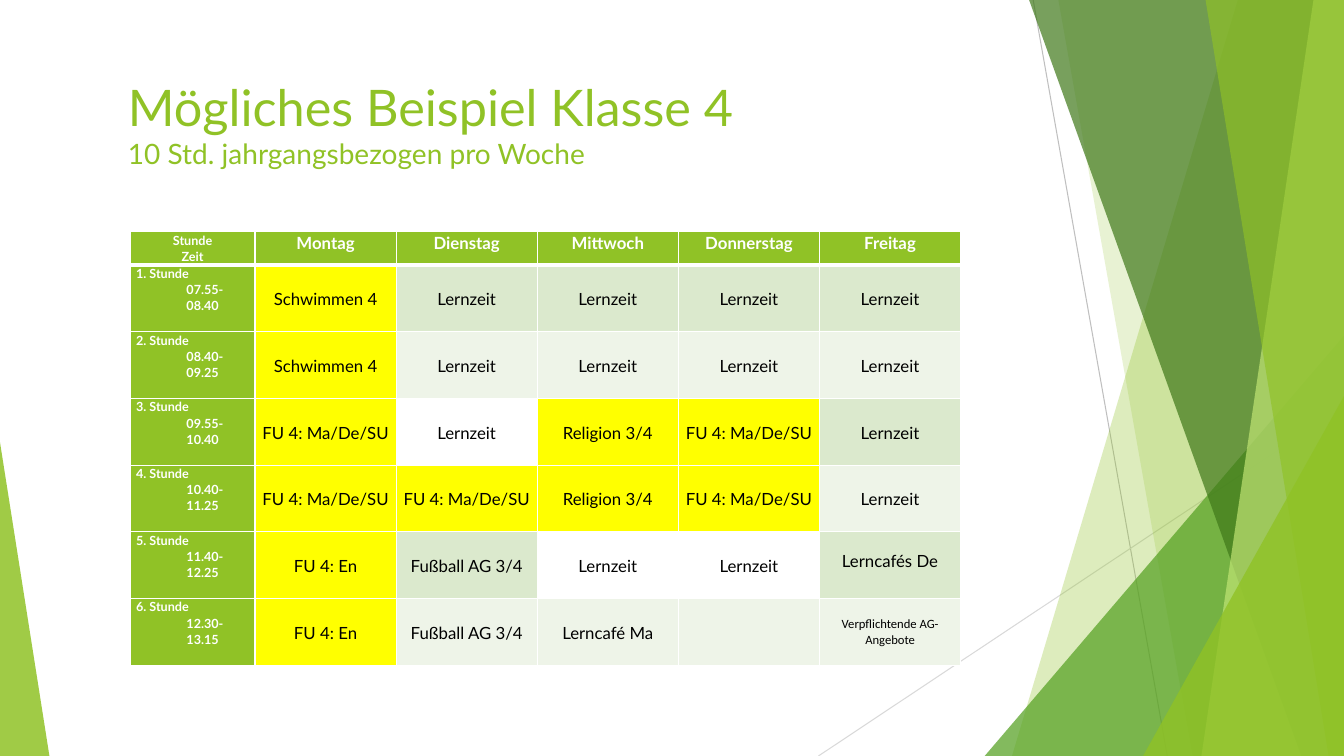
from copy import deepcopy
from lxml import etree
from pptx import Presentation
from pptx import util as u
from pptx.dml.color import RGBColor
from pptx.enum import shapes, text
from pptx.oxml import ns

GREEN = RGBColor(0x90, 0xC2, 0x26)
MID_GREEN = RGBColor(0x54, 0xA0, 0x21)
DARK_GREEN = RGBColor(0x3F, 0x78, 0x19)
LIGHT_GREEN = RGBColor(0xC0, 0xE4, 0x74)
BAND_DARK = RGBColor(0xDB, 0xE9, 0xCD)
BAND_LIGHT = RGBColor(0xEE, 0xF4, 0xE8)
YELLOW = RGBColor(0xFF, 0xFF, 0x00)
WHITE = RGBColor(0xFF, 0xFF, 0xFF)
BLACK = RGBColor(0x00, 0x00, 0x00)
GREY = RGBColor(0xBF, 0xBF, 0xBF)
PALE_GREY = RGBColor(0xD9, 0xD9, 0xD9)
WIDTH, HEIGHT = 960, 540


def paint(shape, colour, opacity):
    shape.shadow.inherit = False
    shape.line.fill.background()
    shape.fill.solid()
    shape.fill.fore_color.rgb = colour
    tint = shape.fill._xPr.find(".//" + ns.qn("a:srgbClr"))
    etree.SubElement(tint, ns.qn("a:alpha"), val=str(opacity * 1000))


def write(para, words, **formats):
    span = para.add_run()
    span.text = words
    colour = formats.pop("colour")
    for name, value in {"name": "Lato", **formats}.items():
        setattr(span.font, name, value)
    span.font.color.rgb = colour
    return span


deck = Presentation()
deck.slide_width, deck.slide_height = u.Pt(WIDTH), u.Pt(HEIGHT)
page = deck.slides.add_slide(deck.slide_layouts[5])

for x1, y1, x2, y2, colour in [
    (738, 0, 833.8, HEIGHT, GREY),
    (WIDTH, 290.2, 584.6, HEIGHT, PALE_GREY),
]:
    line = page.shapes.add_connector(
        shapes.MSO_CONNECTOR.STRAIGHT, u.Pt(x1), u.Pt(y1), u.Pt(x2), u.Pt(y2))
    line.line.color.rgb = colour
    line.line.width = u.Pt(0.75)
    etree.SubElement(line._element.spPr, ns.qn("a:effectLst"))

facets = [
    ("band", (884.2, 722.9), GREEN, 30),
    ("band", (756, 851.8), GREEN, 20),
    ("triangle", (703.4, 239.8, 256.6, 1), MID_GREEN, 72),
    ("band", (735.1, 929.5), DARK_GREEN, 70),
    ("band", (938.2, 858.2), LIGHT_GREEN, 70),
    ("band", (861.1, 949), GREEN, 65),
    ("triangle", (816.5, 283, 143.5, 1), GREEN, 80),
    ("triangle", (0, 316, 35.3, 0), GREEN, 85),
]
for kind, place, colour, opacity in facets:
    if kind == "band":
        top_x, bottom_x = place
        outline = page.shapes.build_freeform(u.Pt(top_x), 0)
        corners = [(WIDTH, 0), (WIDTH, HEIGHT), (bottom_x, HEIGHT)]
        outline.add_line_segments([(u.Pt(x), u.Pt(y)) for x, y in corners])
        facet = outline.convert_to_shape()
    else:
        left, top, width, apex = place
        facet = page.shapes.add_shape(
            shapes.MSO_SHAPE.ISOSCELES_TRIANGLE,
            u.Pt(left), u.Pt(top), u.Pt(width), u.Pt(HEIGHT - top))
        facet.adjustments[0] = apex
    paint(facet, colour, opacity)

title = page.shapes.title
for name, value in {"left": 84.2, "top": 50.4, "width": 792, "height": 85.7}.items():
    setattr(title, name, u.Pt(value))
frame = title.text_frame
frame.auto_size = text.MSO_AUTO_SIZE.NONE
frame.vertical_anchor = text.MSO_ANCHOR.TOP
para = frame.paragraphs[0]
para.alignment = text.PP_ALIGN.LEFT
heading = write(para, "Mögliches Beispiel Klasse 4", size=u.Pt(36), colour=GREEN)
para.add_line_break()
para._p.find(ns.qn("a:br")).append(deepcopy(heading._r.rPr))
write(para, "10 Std. jahrgangsbezogen pro Woche", size=u.Pt(20), colour=GREEN)

FU = "FU 4: Ma/De/SU"
timetable = [
    (["Stunde", "Zeit"], ["Montag", "Dienstag", "Mittwoch", "Donnerstag", "Freitag"], "GGGGG"),
    (["1. Stunde", "07.55-08.40"], ["Schwimmen 4"] + ["Lernzeit"] * 4, "YBBBB"),
    (["2. Stunde", "08.40-09.25"], ["Schwimmen 4"] + ["Lernzeit"] * 4, "YBBBB"),
    (["3. Stunde", "09.55-10.40"], [FU, "Lernzeit", "Religion 3/4", FU, "Lernzeit"], "YWYYB"),
    (["4. Stunde", "10.40-11.25"], [FU, FU, "Religion 3/4", FU, "Lernzeit"], "YYYYB"),
    (["5. Stunde", "11.40-12.25"],
     ["FU 4: En", "Fußball AG 3/4", "Lernzeit", "Lernzeit", "Lerncafés De"], "YBWWB"),
    (["6. Stunde", "12.30-13.15"],
     ["FU 4: En", "Fußball AG 3/4", "Lerncafé Ma", "", "Verpflichtende AG-Angebote"], "YBBBB"),
]
holder = page.shapes.add_table(
    len(timetable), 6, u.Pt(92.9), u.Pt(165.6), u.Pt(593.3), u.Pt(309.6))
grid = holder.table
grid.horz_banding = False
for index, column in enumerate(grid.columns):
    column.width = u.Pt(100.8 if index else 89.3)
for index, row in enumerate(grid.rows):
    row.height = u.Pt(47.64 if index else 23.76)

for r, (period, lessons, codes) in enumerate(timetable):
    fills = {"G": GREEN, "Y": YELLOW, "B": BAND_DARK if r % 2 else BAND_LIGHT}
    for c, (lines, code) in enumerate(zip([period] + [[x] for x in lessons], "G" + codes)):
        cell = grid.cell(r, c)
        is_lesson = r > 0 and c > 0
        for name, value in {
            "margin_left": u.Pt(4.3), "margin_right": u.Pt(4.3),
            "margin_top": 0, "margin_bottom": 0,
            "vertical_anchor": text.MSO_ANCHOR.MIDDLE if is_lesson else text.MSO_ANCHOR.TOP,
        }.items():
            setattr(cell, name, value)
        if lines == ["Lerncafés De"]:
            cell.margin_bottom = u.Pt(7)
        for side in "LRTB":
            thick = (r, side) in [(0, "B"), (1, "T")]
            border = etree.SubElement(
                cell._tc.get_or_add_tcPr(), ns.qn("a:ln" + side), w=str(u.Pt(3 if thick else 1)))
            fill = etree.SubElement(border, ns.qn("a:solidFill"))
            etree.SubElement(fill, ns.qn("a:srgbClr"), val=str(WHITE))
        if code == "W":
            cell.fill.background()
        else:
            cell.fill.solid()
            cell.fill.fore_color.rgb = fills[code]
        for n, words in enumerate(lines):
            if not words:
                continue
            para = cell.text_frame.add_paragraph() if n else cell.text_frame.paragraphs[0]
            para.line_spacing = 1.07
            para.alignment = text.PP_ALIGN.LEFT if r and not c else text.PP_ALIGN.CENTER
            if r and not c and n:
                para._p.get_or_add_pPr().set("marL", str(u.Pt(36)))
            small = c == 0 or words.startswith("Verpflichtende")
            write(para, words, size=u.Pt(9 if small else 12), bold=not is_lesson,
                  name="Calibri" if small and c else "Lato",
                  colour=BLACK if is_lesson else WHITE)

deck.save("out.pptx")
